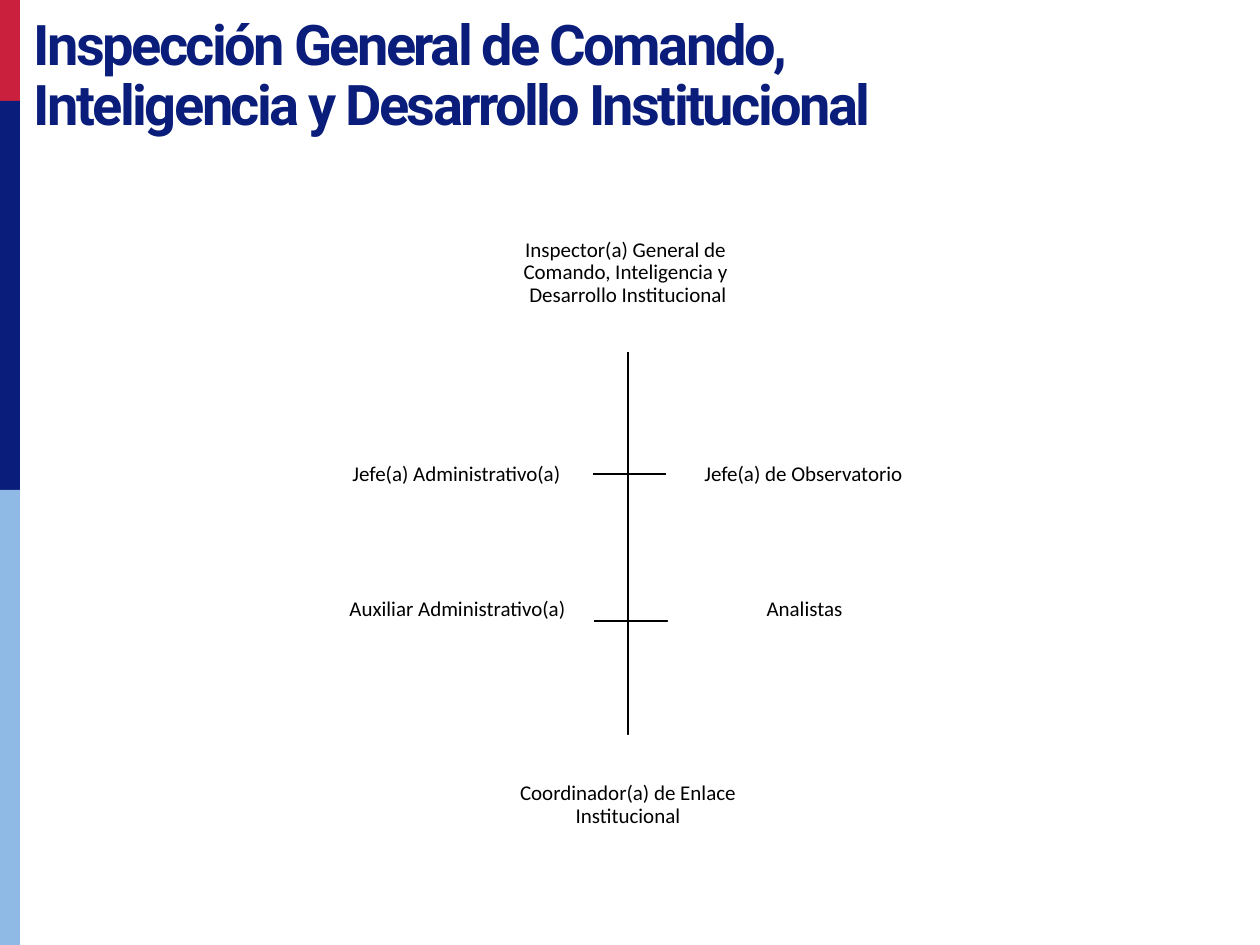
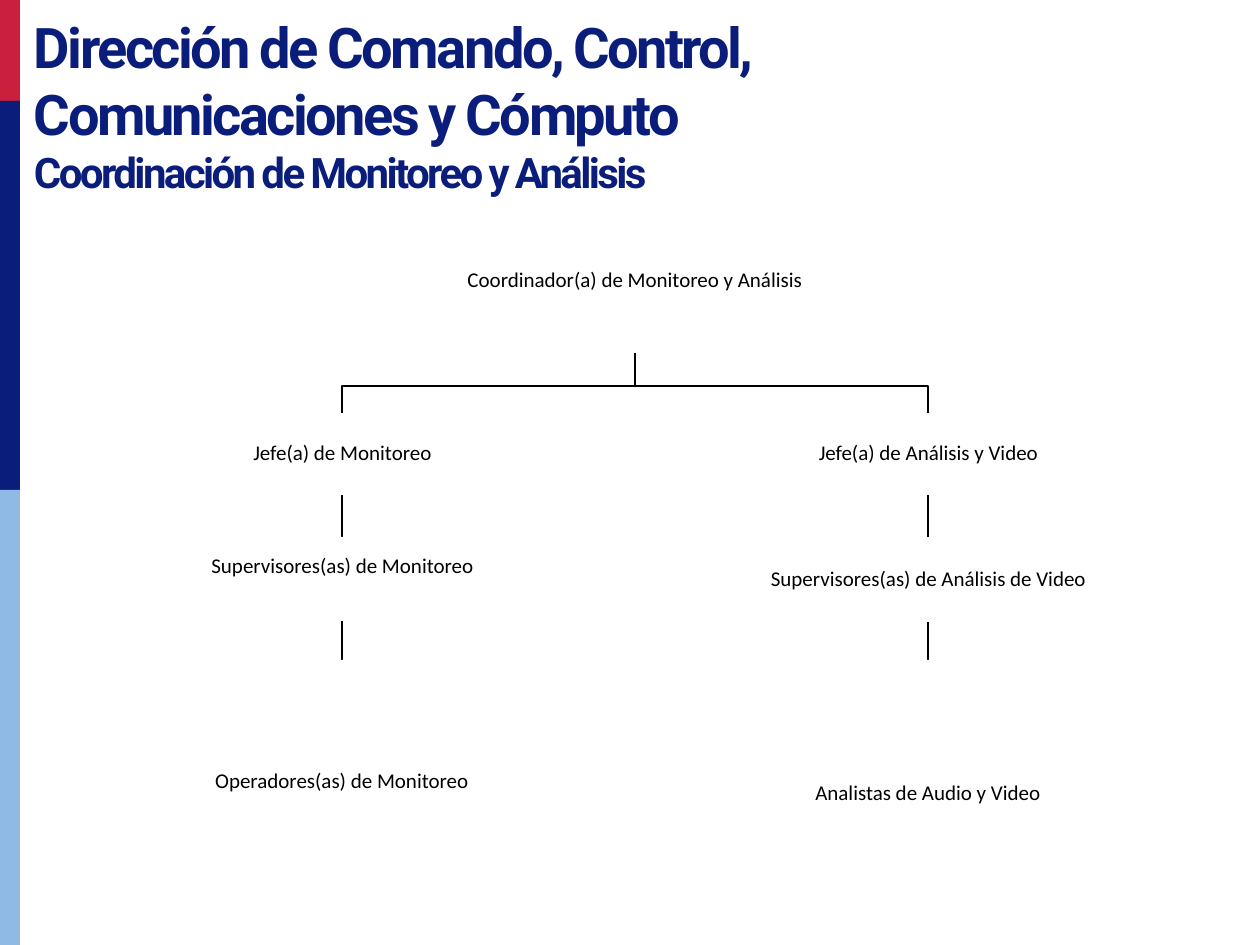
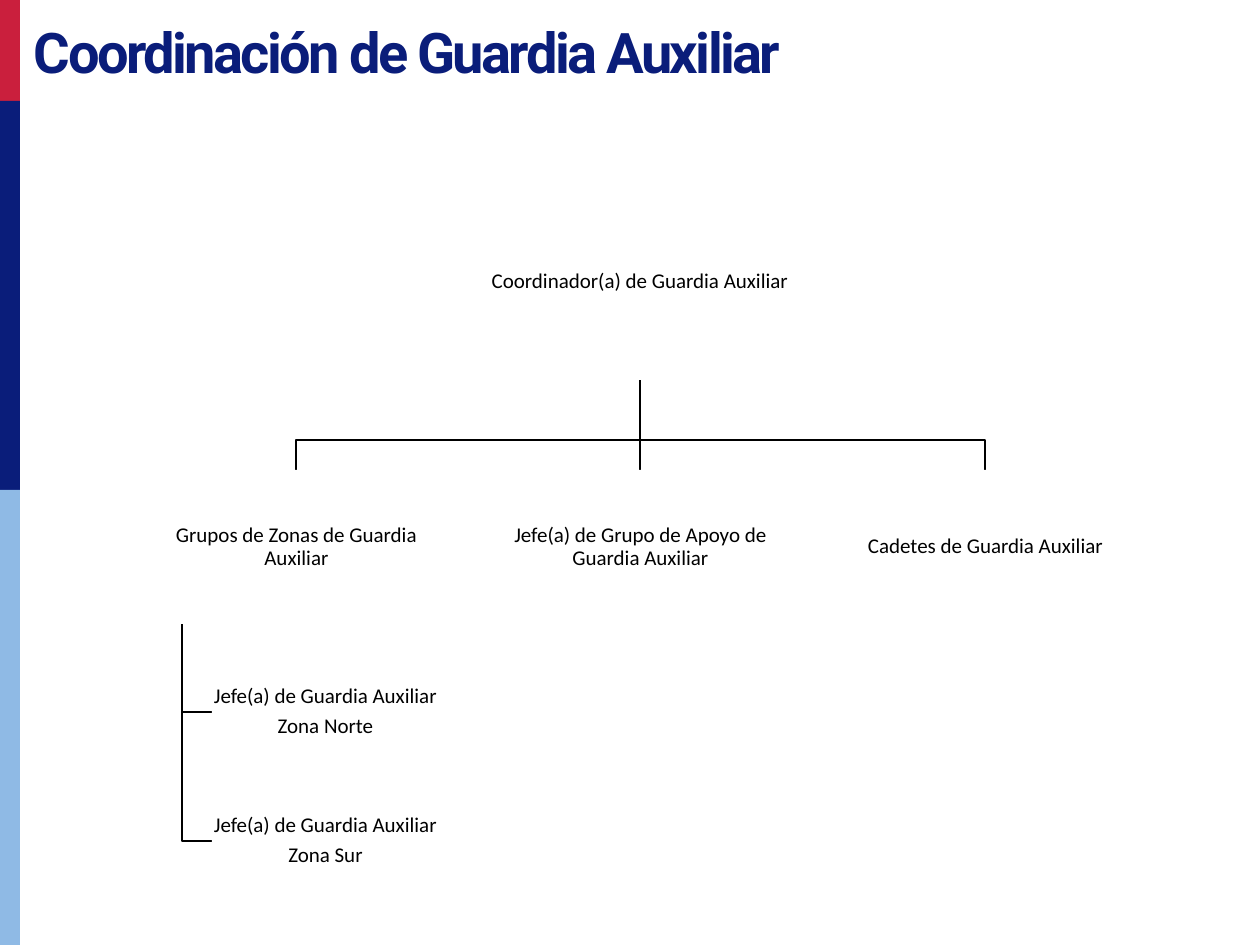
from collections.abc import Iterable
from dataclasses import dataclass
from itertools import pairwise

from lxml.etree import SubElement
from pptx import Presentation
from pptx.dml.color import RGBColor
from pptx.enum.shapes import MSO_CONNECTOR, MSO_SHAPE, PP_PLACEHOLDER
from pptx.enum.text import MSO_ANCHOR, PP_ALIGN
from pptx.oxml.ns import qn
from pptx.util import Emu, Pt

EMU_PER_PX = 914400 / 126
SLIDE_WIDTH, SLIDE_HEIGHT = 1260, 945
TITLE_ONLY = 5

Point = tuple[int, int]
Route = tuple[Point, ...]


@dataclass(frozen=True)
class Theme:
    """Colours, fonts and type sizes of the deck."""

    navy: str = "0A1D7A"
    bands: tuple[str, ...] = ("CA1F3D", "0A1D7A", "8FBAE5")
    box: str = "FFFFFF"
    ink: str = "000000"
    title_font: str = "Roboto"
    body_font: str = "Calibri"
    title_size: int = 32
    subtitle_size: int = 24
    body_size: int = 12
    title_tracking: int = -150
    line_width: int = 1


THEME = Theme()
BAND_WIDTH = 20
BAND_EDGES = (0, 101, 490, 945)


@dataclass(frozen=True)
class Heading:
    """A slide title, with an optional subtitle."""

    text: str
    top: int
    height: int
    subtitle: str = ""
    spacing: float = 1.0


@dataclass(frozen=True)
class Post:
    """A box of the chart, centred on a column; lift raises its text."""

    lines: tuple[str, ...]
    center: int
    top: int
    width: int
    height: int
    lift: int = 0


@dataclass(frozen=True)
class OrgChart:
    """One slide: heading, connecting routes and posts."""

    heading: Heading
    routes: tuple[Route, ...]
    posts: tuple[Post, ...]


def px(length: int) -> Emu:
    """Turn px into EMU."""
    return Emu(round(length * EMU_PER_PX))


def write_text(paragraph, text: str, *, font: str, size: int, color: str, bold: bool = False,
               tracking: int = 0, align=PP_ALIGN.LEFT, spacing: float = 1.0,
               space_after: float = 0) -> None:
    """Fill a paragraph with text in the given format."""
    paragraph.text = text
    paragraph.alignment = align
    paragraph.line_spacing = spacing
    paragraph.space_before = Pt(0)
    paragraph.space_after = Pt(space_after)
    for run in paragraph.runs:
        run.font.name = font
        run.font.size = Pt(size)
        run.font.bold = bold
        run.font.color.rgb = RGBColor.from_string(color)
        if tracking:
            run.font.fill
            run.font._element.set("spc", str(tracking))


def set_insets(frame, left: int, top: int, right: int, bottom: int) -> None:
    """Set the four margins of a text frame."""
    frame.margin_left, frame.margin_top = px(left), px(top)
    frame.margin_right, frame.margin_bottom = px(right), px(bottom)


def add_rectangle(slide, color: str, left: int, top: int, width: int, height: int):
    """Add a plain filled rectangle."""
    shape = slide.shapes.add_shape(MSO_SHAPE.RECTANGLE, px(left), px(top), px(width), px(height))
    shape.shadow.inherit = False
    shape.fill.solid()
    shape.fill.fore_color.rgb = RGBColor.from_string(color)
    shape.line.fill.background()
    return shape


def add_bands(slide) -> None:
    """Put the side bands on the layout of the slide."""
    layout = slide.slide_layout
    for placeholder in list(layout.placeholders):
        if placeholder.placeholder_format.type != PP_PLACEHOLDER.TITLE:
            layout.shapes.element.remove(placeholder.element)
    bands = [add_rectangle(slide, color, 0, top, BAND_WIDTH, bottom - top)
             for color, (top, bottom) in zip(THEME.bands, pairwise(BAND_EDGES))]
    for band in bands:
        layout.shapes.element.append(band.element)


def add_heading(slide, heading: Heading) -> None:
    """Place and fill the title placeholder."""
    title = slide.shapes.title
    title.left, title.top = px(21), px(heading.top)
    title.width, title.height = px(940), px(heading.height)
    frame = title.text_frame
    frame.word_wrap = True
    frame.vertical_anchor = MSO_ANCHOR.TOP
    set_insets(frame, 13, 6, 13, 6)
    sizes = {heading.text: THEME.title_size, heading.subtitle: THEME.subtitle_size}
    for index, (text, size) in enumerate(sizes.items()):
        if text:
            paragraph = frame.add_paragraph() if index else frame.paragraphs[0]
            write_text(paragraph, text, font=THEME.title_font, size=size, color=THEME.navy,
                       bold=True, tracking=THEME.title_tracking, spacing=heading.spacing)


def add_route(slide, route: Route) -> None:
    """Draw a straight connector, or an open outline when the route bends."""
    (start_x, start_y), *rest = route
    if len(rest) == 1:
        end_x, end_y = rest[0]
        shape = slide.shapes.add_connector(
            MSO_CONNECTOR.STRAIGHT, px(start_x), px(start_y), px(end_x), px(end_y))
        SubElement(shape.element.spPr, qn("a:effectLst"))
    else:
        builder = slide.shapes.build_freeform(start_x, start_y, scale=EMU_PER_PX)
        builder.add_line_segments(rest, close=False)
        shape = builder.convert_to_shape()
        shape.fill.background()
        shape.shadow.inherit = False
    shape.line.color.rgb = RGBColor.from_string(THEME.ink)
    shape.line.width = Pt(THEME.line_width)


def add_post(slide, post: Post) -> None:
    """Draw a box with its centred text."""
    shape = add_rectangle(slide, THEME.box, post.center - post.width // 2, post.top,
                          post.width, post.height)
    frame = shape.text_frame
    frame.word_wrap = True
    frame.vertical_anchor = MSO_ANCHOR.MIDDLE
    set_insets(frame, 1, 1, 1, 1 + post.lift)
    for index, line in enumerate(post.lines):
        paragraph = frame.add_paragraph() if index else frame.paragraphs[0]
        write_text(paragraph, line, font=THEME.body_font, size=THEME.body_size, color=THEME.ink,
                   align=PP_ALIGN.CENTER, spacing=0.9, space_after=4.2)
    for line_break in shape.element.iter(qn("a:br")):
        SubElement(line_break, qn("a:rPr"), sz=str(THEME.body_size * 100))


def elbows(start: Point, ends: Iterable[Point]) -> tuple[Route, ...]:
    """Run down from the start and turn sideways to each end."""
    return tuple((start, (start[0], y), (x, y)) for x, y in ends)


def forks(start: Point, turn: int, bottom: int, columns: Iterable[int]) -> tuple[Route, ...]:
    """Run down from the start, across at the turn and down to each column."""
    return tuple((start, (start[0], turn), (x, turn), (x, bottom)) for x in columns)


LIFT = 24
LEFT, RIGHT = 342, 928
ZONES, SUPPORT, CADETS = 296, 640, 985

INSPECTION = OrgChart(
    Heading("Inspección General de Comando, Inteligencia y Desarrollo Institucional", 11, 135,
            spacing=0.9),
    elbows((628, 352), ((668, 621), (594, 621), (666, 474), (592, 474)))
    + (((628, 352), (628, 735)),),
    (
        Post(("Inspector(a) General de \vComando, Inteligencia y \vDesarrollo Institucional",),
             628, 194, 312, 158),
        Post(("Coordinador(a) de Enlace Institucional",), 628, 735, 284, 141),
        Post(("Jefe(a) Administrativo(a)",), 456, 421, 273, 108),
        Post(("Jefe(a) de Observatorio",), 803, 421, 273, 108),
        Post(("Auxiliar Administrativo(a)",), 457, 568, 273, 107, LIFT),
        Post(("Analistas",), 804, 568, 273, 107, LIFT),
    ),
)

MONITORING = OrgChart(
    Heading("Dirección de Comando, Control, Comunicaciones y Cómputo", 6, 199,
            "Coordinación de Monitoreo y Análisis"),
    forks((635, 353), 386, 413, (LEFT, RIGHT))
    + tuple(((x, top), (x, bottom)) for x in (LEFT, RIGHT)
            for top, bottom in ((495, 537), (621, 660))),
    (
        Post(("Coordinador(a) de Monitoreo y Análisis",), 635, 208, 386, 145),
        Post(("Jefe(a) de Monitoreo",), LEFT, 413, 411, 82),
        Post(("Supervisores(as) de Monitoreo",), LEFT, 537, 411, 84, LIFT),
        Post(("Operadores(as) de Monitoreo",), LEFT, 660, 530, 267, LIFT),
        Post(("Jefe(a) de Análisis y Video",), RIGHT, 413, 411, 82),
        Post(("Supervisores(as) de Análisis de Video",), RIGHT, 538, 411, 84),
        Post(("Analistas de Audio y Video",), RIGHT, 660, 530, 267),
    ),
)

AUXILIARY_GUARD = OrgChart(
    Heading("Coordinación de Guardia Auxiliar", 11, 81),
    forks((SUPPORT, 380), 440, 470, (ZONES, CADETS))
    + (((SUPPORT, 380), (SUPPORT, 470)),)
    + elbows((182, 624), ((212, 841), (212, 712))),
    (
        Post(("Coordinador(a) de Guardia Auxiliar",), SUPPORT, 183, 396, 197),
        Post(("Grupos de Zonas de Guardia Auxiliar",), ZONES, 470, 285, 154),
        Post(("Jefe(a) de Guardia Auxiliar", "Zona Norte"), 325, 661, 227, 101),
        Post(("Jefe(a) de Guardia Auxiliar", "Zona Sur"), 325, 790, 227, 101),
        Post(("Jefe(a) de Grupo de Apoyo de Guardia Auxiliar",), SUPPORT, 470, 285, 154),
        Post(("Cadetes de Guardia Auxiliar",), CADETS, 470, 285, 154),
    ),
)


def add_chart_slide(presentation, chart: OrgChart):
    """Add one organisation chart slide."""
    slide = presentation.slides.add_slide(presentation.slide_layouts[TITLE_ONLY])
    add_heading(slide, chart.heading)
    for route in chart.routes:
        add_route(slide, route)
    for post in chart.posts:
        add_post(slide, post)
    return slide


def main() -> None:
    """Build and save the deck."""
    presentation = Presentation()
    presentation.slide_width, presentation.slide_height = px(SLIDE_WIDTH), px(SLIDE_HEIGHT)
    slides = [add_chart_slide(presentation, chart)
              for chart in (INSPECTION, MONITORING, AUXILIARY_GUARD)]
    add_bands(slides[0])
    presentation.save("out.pptx")


if __name__ == "__main__":
    main()
